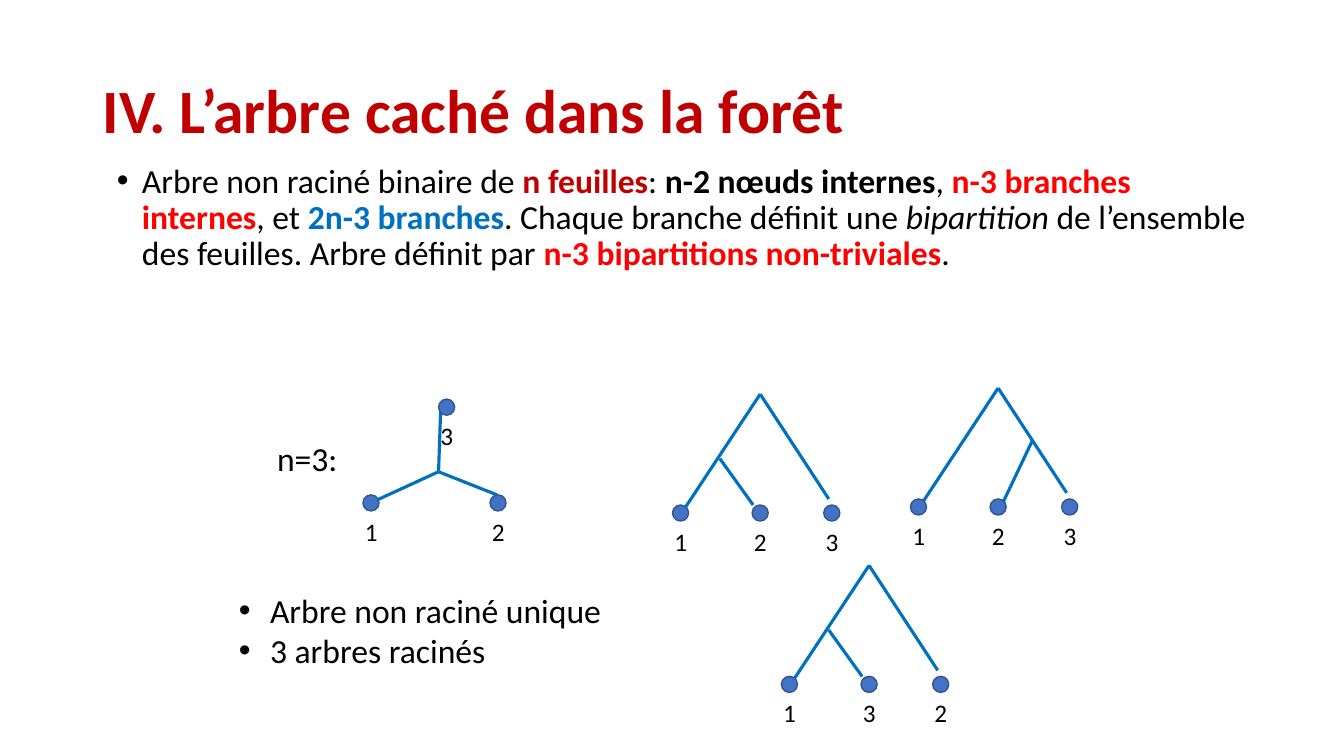
"""Build a slide on unrooted and rooted trees with three leaves."""
import pptx
import pptx.dml.color
import pptx.enum.shapes
import pptx.enum.text
import pptx.oxml
import pptx.oxml.ns
import pptx.util
from pptx.util import Inches

BLACK, CRIMSON, RED, BLUE = "000000", "C00000", "FF0000", "0070C0"
LEAF_FILL, LEAF_EDGE = "4472C4", "325491"
FIT = pptx.enum.text.MSO_AUTO_SIZE.SHAPE_TO_FIT_TEXT
MIDDLE = pptx.enum.text.MSO_ANCHOR.MIDDLE
LEAF_SIZE = 0.16
LEAF_STEPS = (0, 0.79, 1.5)
ROOT = (0.87, -1.1)
LEFT_FORK = ((0.8, 0), (0.47, -0.46))
RIGHT_FORK = ((0.92, 0.03), (1.21, -0.58))

STATEMENT = [
    ("Arbre non raciné binaire de ", {}),
    ("n feuilles", {"color": CRIMSON, "bold": True}),
    (": ", {}),
    ("n-2 nœuds internes", {"bold": True}),
    (", ", {}),
    ("n-3 branches internes", {"color": RED, "bold": True}),
    (", et ", {}),
    ("2n-3 branches", {"color": BLUE, "bold": True}),
    (". Chaque branche définit une ", {}),
    ("bipartition", {"italic": True}),
    (" de l’ensemble des feuilles. Arbre définit par ", {}),
    ("n-3 bipartitions non-triviales", {"color": RED, "bold": True}),
    (".", {}),
]


def rgb(code):
    """Turn a hex string into a colour."""
    return pptx.dml.color.RGBColor.from_string(code)


def apply_format(target, values):
    """Set each named attribute on the target."""
    for name, value in values.items():
        setattr(target, name, value)


def add_bullet(para, indent):
    """Give a paragraph a hanging round bullet."""
    properties = para._p.get_or_add_pPr()
    properties.set("marL", str(Inches(indent)))
    properties.set("indent", str(-Inches(indent)))
    namespace = pptx.oxml.ns.nsdecls("a")
    for tag in ('buFont {} typeface="Arial"', 'buChar {} char="•"'):
        properties.append(pptx.oxml.parse_xml(f"<a:{tag.format(namespace)}/>"))


def add_text(parent, place, paragraphs, size, frame_format, para_format=None, indent=0):
    """Add a text box whose paragraphs are lists of formatted spans."""
    box = parent.shapes.add_textbox(*map(Inches, place))
    frame = box.text_frame
    apply_format(frame, frame_format)
    for index, spans in enumerate(paragraphs):
        para = frame.add_paragraph() if index else frame.paragraphs[0]
        apply_format(para, para_format or {})
        if indent:
            add_bullet(para, indent)
        for text, style in spans:
            span = para.add_run()
            span.text = text
            values = {"name": "Calibri", "size": pptx.util.Pt(size), **style}
            span.font.color.rgb = rgb(values.pop("color", BLACK))
            apply_format(span.font, values)


def add_leaf(page, left, top, label):
    """Add a grouped leaf dot with its label below."""
    group = page.shapes.add_group_shape()
    dot = group.shapes.add_shape(
        pptx.enum.shapes.MSO_SHAPE.OVAL,
        *map(Inches, (left, top, LEAF_SIZE, LEAF_SIZE)))
    dot.shadow.inherit = False
    dot.fill.solid()
    dot.fill.fore_color.rgb = rgb(LEAF_FILL)
    dot.line.color.rgb = rgb(LEAF_EDGE)
    dot.line.width = pptx.util.Pt(1)
    add_text(group, (left - 0.08, top + 0.16, 0.33, 0.4), [[(label, {})]], 18,
             {"word_wrap": False, "auto_size": FIT})


def add_branch(page, start, end):
    """Add a straight branch between two points."""
    branch = page.shapes.add_connector(
        pptx.enum.shapes.MSO_CONNECTOR.STRAIGHT, *map(Inches, (*start, *end)))
    branch.line.color.rgb = rgb(BLUE)
    branch.line.width = pptx.util.Pt(2.25)
    pptx.oxml.ns.qn("a:effectLst")
    effects = f"<a:effectLst {pptx.oxml.ns.nsdecls('a')}/>"
    branch._element.spPr.append(pptx.oxml.parse_xml(effects))


def add_rooted_tree(page, left, top, labels, fork):
    """Add a rooted tree placed by its first leaf."""
    for step, label in zip(LEAF_STEPS, labels):
        add_leaf(page, left + step, top, label)
    for ends in (((0.13, 0.02), ROOT), fork, ((1.55, -0.06), ROOT)):
        add_branch(page, *((left + x, top + y) for x, y in ends))


def add_unrooted_tree(page):
    """Add the single unrooted tree with its three leaves."""
    centre = (4.35, 4.68)
    for left, top, label in ((3.6, 4.91, "1"), (4.86, 4.91, "2"), (4.35, 3.96, "3")):
        add_leaf(page, left, top, label)
    for tip in ((3.74, 4.96), (4.93, 4.91), (4.37, 4.09)):
        add_branch(page, tip, centre)


def main():
    """Build and save the slide."""
    deck = pptx.Presentation()
    apply_format(deck, {"slide_width": Inches(13.33), "slide_height": Inches(7.5)})
    page = deck.slides.add_slide(deck.slide_layouts[6])
    title = [("IV. L’arbre caché dans la forêt", {"color": CRIMSON, "bold": True})]
    add_text(page, (0.92, 0.4, 11.5, 1.45), [title], 44,
             {"word_wrap": True, "vertical_anchor": MIDDLE}, {"line_spacing": 0.9})
    add_text(page, (1.06, 1.58, 11.39, 1.3), [STATEMENT], 24, {"word_wrap": True},
             {"line_spacing": 0.9, "space_before": pptx.util.Pt(10)}, 0.25)
    add_text(page, (2.65, 4.3, 0.89, 0.5), [[("n=3:", {})]], 24,
             {"word_wrap": False, "auto_size": FIT})
    findings = [[("Arbre non raciné unique", {})], [("3 arbres racinés", {})]]
    add_text(page, (2.27, 5.8, 4.16, 0.91), findings, 24,
             {"word_wrap": True, "auto_size": FIT}, indent=0.31)
    add_unrooted_tree(page)
    add_rooted_tree(page, 6.67, 5.01, "123", LEFT_FORK)
    add_rooted_tree(page, 9.03, 4.95, "123", RIGHT_FORK)
    add_rooted_tree(page, 7.75, 6.71, "132", LEFT_FORK)
    deck.save("out.pptx")


if __name__ == "__main__":
    main()
